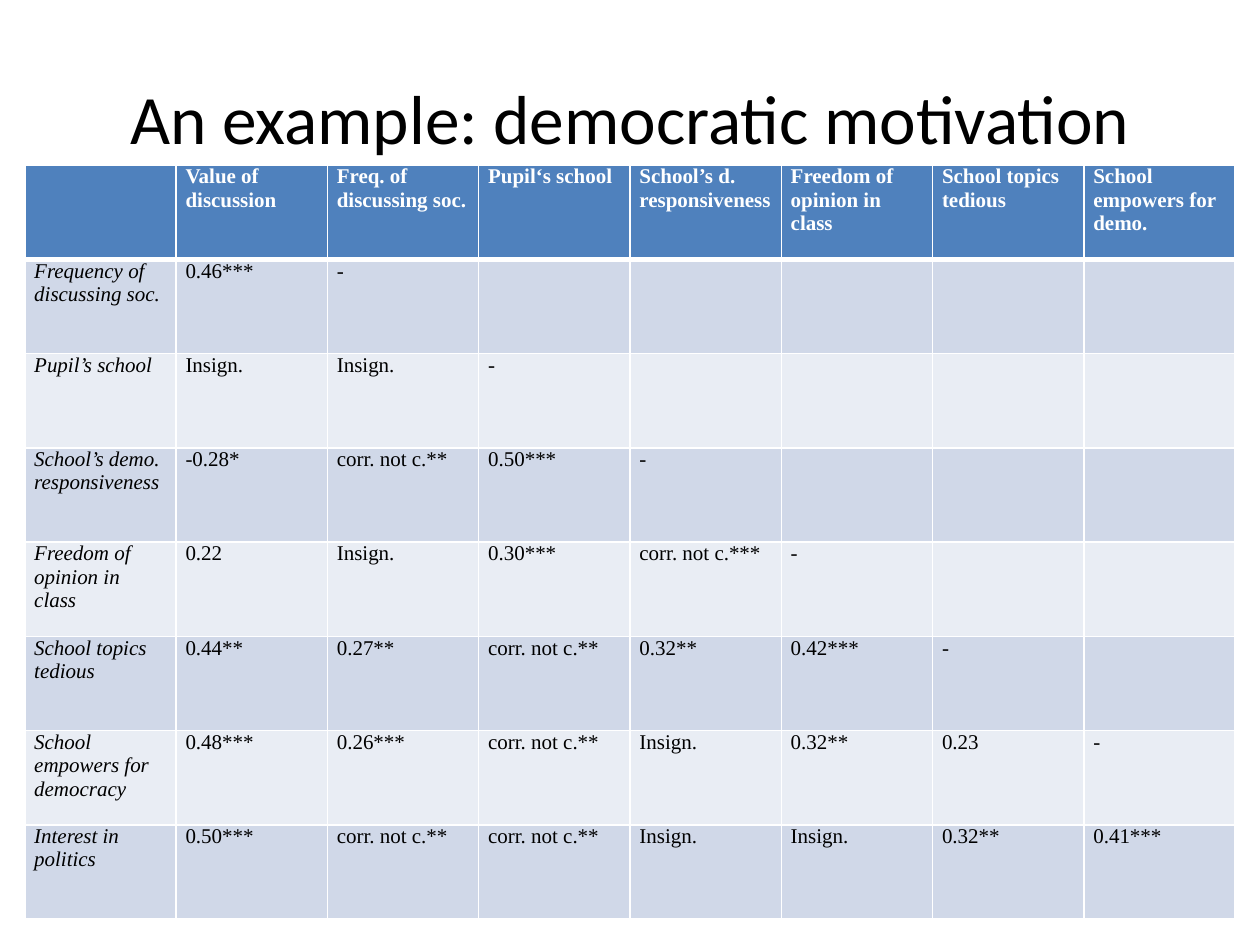
import pptx
import pptx.util
import pptx.dml.color
import pptx.enum.text
import pptx.oxml
import pptx.oxml.ns

Cm = pptx.util.Cm
Pt = pptx.util.Pt
RGB = pptx.dml.color.RGBColor

# Content
TITLE = "An example: democratic motivation"
HEADS = ["", "Value of discussion", "Freq. of discussing soc.", "Pupil‘s school",
         "School’s d. responsiveness", "Freedom of opinion in class",
         "School topics tedious", "School empowers for demo."]
ROWS = [
    ["Frequency of discussing soc.", "0.46***", "-"],
    ["Pupil’s school", "Insign.", "Insign.", "-"],
    ["School’s demo. responsiveness", "-0.28*", "corr. not c.**", "0.50***", "-"],
    ["Freedom of opinion in class", "0.22", "Insign.", "0.30***",
     "corr. not c.***", "-"],
    ["School topics tedious", "0.44**", "0.27**", "corr. not c.**", "0.32**",
     "0.42***", "-"],
    ["School empowers for democracy", "0.48***", "0.26***", "corr. not c.**",
     "Insign.", "0.32**", "0.23", "-"],
    ["Interest in politics", "0.50***", "corr. not c.**", "corr. not c.**",
     "Insign.", "Insign.", "0.32**", "0.41***"],
]

# Colours and formats
BLACK = RGB(0x00, 0x00, 0x00)
WHITE = RGB(0xFF, 0xFF, 0xFF)
BLUE = RGB(0x4F, 0x81, 0xBD)
BANDS = [RGB(0xE9, 0xED, 0xF4), RGB(0xD0, 0xD8, 0xE8)]
INSETS = {"margin_left": Cm(0.19), "margin_right": Cm(0.19),
          "margin_top": 0, "margin_bottom": 0}
BODY = {"name": "Times New Roman", "size": Pt(12), "bold": False, "italic": False}
HEAD = {**BODY, "bold": True}
LABEL = {**BODY, "italic": True}


def apply(item, form):
    for key, value in form.items():
        setattr(item, key, value)


def edge(cell, side, width):
    """Draw one white cell border."""
    line = pptx.oxml.parse_xml(
        f'<a:ln{side} {pptx.oxml.ns.nsdecls("a")} w="{Pt(width)}">'
        f'<a:solidFill><a:srgbClr val="{WHITE}"/></a:solidFill></a:ln{side}>')
    cell._tc.get_or_add_tcPr().append(line)


def style(cell, text, row, col):
    """Fill, frame and write one cell."""
    for side in "LRTB":
        thick = (row, side) in ((0, "B"), (1, "T"))
        edge(cell, side, 3 if thick else 1)
    cell.fill.solid()
    cell.fill.fore_color.rgb = BANDS[row % 2] if row else BLUE
    apply(cell, INSETS)
    if text:
        run = cell.text_frame.paragraphs[0].add_run()
        run.text = text
        apply(run.font, HEAD if row == 0 else LABEL if col == 0 else BODY)
        run.font.color.rgb = BLACK if row else WHITE


def main():
    deck = pptx.Presentation()
    apply(deck, {"slide_width": Cm(25.4), "slide_height": Cm(19.05)})
    slide = deck.slides.add_slide(deck.slide_layouts[5])

    # Title
    title = slide.shapes.title
    apply(title, {"left": Cm(1.27), "top": Cm(0.76),
                  "width": Cm(22.86), "height": Cm(3.18)})
    frame = title.text_frame
    apply(frame, {"text": TITLE, "word_wrap": True,
                  "auto_size": pptx.enum.text.MSO_AUTO_SIZE.NONE,
                  "vertical_anchor": pptx.enum.text.MSO_ANCHOR.MIDDLE})
    para = frame.paragraphs[0]
    para.alignment = pptx.enum.text.PP_ALIGN.CENTER
    font = para.runs[0].font
    apply(font, {"name": "Calibri", "size": Pt(39.6)})
    font.color.rgb = BLACK

    # Correlation table; short rows are padded with empty cells
    grid = [HEADS] + ROWS
    count = len(HEADS)
    table = slide.shapes.add_table(len(grid), count, Cm(0.5), Cm(3.33),
                                   Cm(24.4), Cm(15.2)).table
    for row, texts in enumerate(grid):
        padded = texts + [""] * (count - len(texts))
        for col, text in enumerate(padded):
            style(table.cell(row, col), text, row, col)

    deck.save("out.pptx")


if __name__ == "__main__":
    main()
